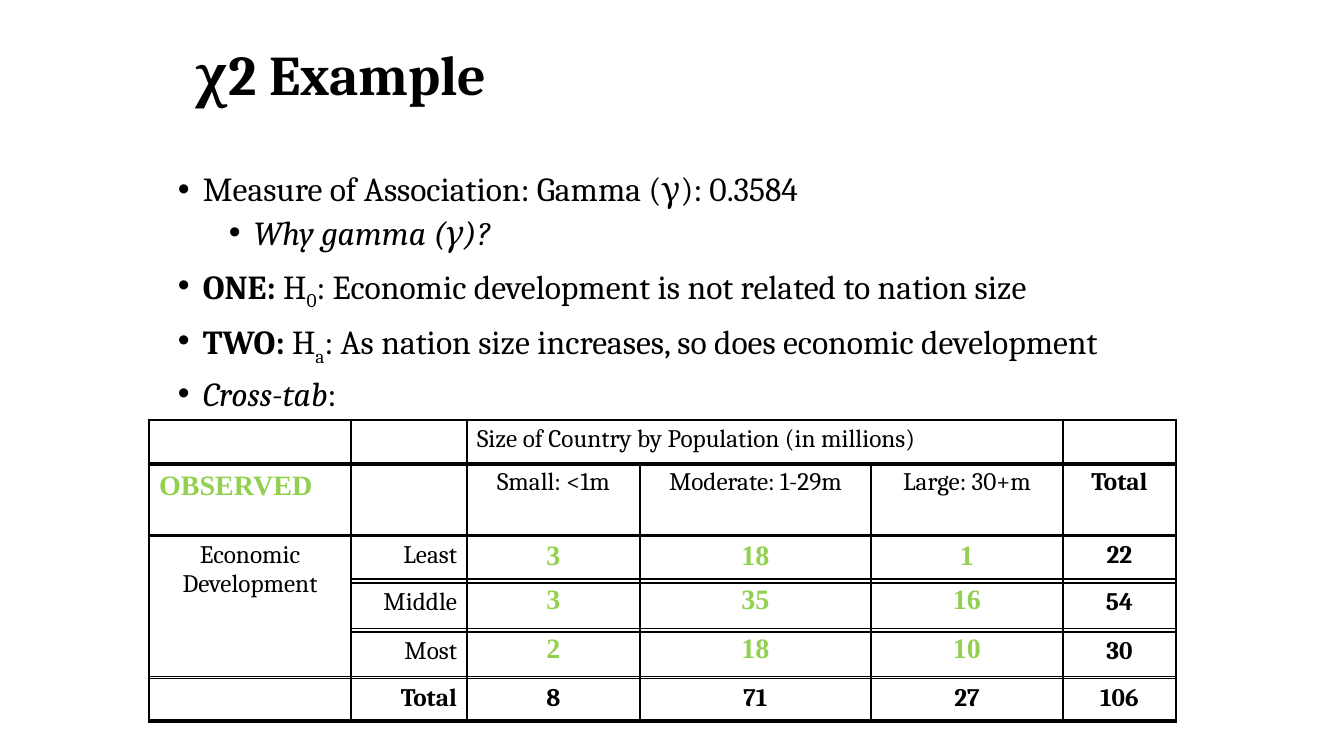
"""Build the chi-square example slide with its two overlaid cross-tab grids."""
import lxml.etree
import pptx
import pptx.dml.color
import pptx.enum.text
import pptx.oxml.ns
import pptx.util

BLACK = pptx.dml.color.RGBColor(0x00, 0x00, 0x00)
GREEN = pptx.dml.color.RGBColor(0x92, 0xD0, 0x50)
ALIGN = pptx.enum.text.PP_ALIGN
ANCHOR = pptx.enum.text.MSO_ANCHOR

TITLE = "χ2 Example"
BULLETS = [
    (0, [("Measure of Association: Gamma (γ): 0.3584", {})]),
    (1, [("Why gamma (γ)?", {"italic": True})]),
    (0, [("ONE: ", {"bold": True}), ("H", {}), ("0", {"subscript": True}),
         (": Economic development is not related to nation size", {})]),
    (0, [("TWO: ", {"bold": True}), ("H", {}), ("a", {"subscript": True}),
         (": As nation size increases, so does economic development", {})]),
    (0, [("Cross-tab", {"italic": True}), (":", {})]),
]
LABELS = [
    ["", "", "Size of Country by Population (in millions)", "", "", ""],
    ["", "", "Small: <1m", "Moderate: 1-29m", "Large: 30+m", "Total"],
    ["Economic Development", "Least", "", "", "", "22"],
    ["", "Middle", "", "", "", "54"],
    ["", "Most", "", "", "", "30"],
    ["", "Total", "8", "71", "27", "106"],
]
OBSERVED = [
    ["OBSERVED", "", "", "", "", ""],
    ["", "", "3", "18", "1", ""],
    ["", "", "3", "35", "16", ""],
    ["", "", "2", "18", "10", ""],
    ["", "", "", "", "", ""],
]
COLUMN_WIDTHS = [202, 116, 173, 231, 192, 113]
LABEL_HEIGHTS = [43, 73, 47, 49, 47, 41]
OBSERVED_HEIGHTS = [70, 44, 50, 48, 45]
LABEL_MERGES = [((0, 2), (0, 4)), ((2, 0), (4, 0))]
OBSERVED_MERGES = [((1, 0), (3, 0))]
TABLE_LEFT, LABEL_TOP, OBSERVED_TOP = 149, 420, 465
INNER_LINE, OUTER_LINE = 1, 2.25


def px(length):
    return pptx.util.Emu(round(length * 914400 / 100.8))


def add_text(para, text, size=24, font="Cambria", color=BLACK, bold=False,
             italic=False, subscript=False):
    span = para.add_run()
    span.text = text
    span.font.size = pptx.util.Pt(size)
    span.font.name = font
    span.font.color.rgb = color
    span.font.bold = bold
    span.font.italic = italic
    if subscript:
        span.font._element.set("baseline", "-25000")


def add_box(page, left, top, width, height, anchor):
    box = page.shapes.add_textbox(px(left), px(top), px(width), px(height))
    box.text_frame.word_wrap = True
    box.text_frame.vertical_anchor = anchor
    return box.text_frame


def add_bullet(para, level):
    para.level = level
    para.line_spacing = 0.9
    para.space_before = pptx.util.Pt(5 if level else 10)
    properties = para._p.get_or_add_pPr()
    properties.set("marL", str(px(25 + 51 * level)))
    properties.set("indent", str(px(-25)))
    tag = pptx.oxml.ns.qn
    lxml.etree.SubElement(properties, tag("a:buFont")).set("typeface", "Arial")
    lxml.etree.SubElement(properties, tag("a:buChar")).set("char", "•")


def add_border(cell, side, width):
    tag = pptx.oxml.ns.qn
    line = lxml.etree.SubElement(cell._tc.get_or_add_tcPr(), tag(f"a:ln{side}"))
    line.set("w", str(pptx.util.Pt(width)))
    fill = lxml.etree.SubElement(line, tag("a:solidFill"))
    lxml.etree.SubElement(fill, tag("a:srgbClr")).set("val", str(BLACK))


def add_grid(page, top, heights, rows, merges, outer, style):
    frame = page.shapes.add_table(
        len(rows), len(COLUMN_WIDTHS), px(TABLE_LEFT), px(top),
        px(sum(COLUMN_WIDTHS)), px(sum(heights)))
    grid = frame.table
    grid.first_row = grid.horz_banding = False
    for column, width in zip(grid.columns, COLUMN_WIDTHS):
        column.width = px(width)
    for row, height in zip(grid.rows, heights):
        row.height = px(height)
    for start, end in merges:
        grid.cell(*start).merge(grid.cell(*end))
    last_row, last_column = len(rows) - 1, len(COLUMN_WIDTHS) - 1
    for r, texts in enumerate(rows):
        for c, text in enumerate(texts):
            cell = grid.cell(r, c)
            edges = {"L": c == 0, "R": c == last_column,
                     "T": r == 0 and "T" in outer, "B": r == last_row}
            for side, is_outer in edges.items():
                add_border(cell, side, OUTER_LINE if is_outer else INNER_LINE)
            cell.fill.background()
            if text:
                para = cell.text_frame.paragraphs[0]
                para.alignment, text_format = style(r, c)
                add_text(para, text, **text_format)


def label_style(row, column):
    if row == 0:
        alignment = ALIGN.LEFT
    else:
        alignment = ALIGN.RIGHT if column == 1 else ALIGN.CENTER
    bold = row == len(LABELS) - 1 or column == len(COLUMN_WIDTHS) - 1
    return alignment, {"size": 18, "bold": bold}


def observed_style(row, column):
    alignment = ALIGN.CENTER if row else ALIGN.LEFT
    return alignment, {"size": 20, "font": "Times New Roman",
                       "color": GREEN, "bold": True}


def main():
    deck = pptx.Presentation()
    deck.slide_width, deck.slide_height = px(1344), px(756)
    page = deck.slides.add_slide(deck.slide_layouts[6])

    title = add_box(page, 185, 17, 857, 121, ANCHOR.MIDDLE).paragraphs[0]
    title.line_spacing = 0.9
    add_text(title, TITLE, size=40, bold=True)

    body = add_box(page, 168, 168, 1008, 252, ANCHOR.TOP)
    for index, (level, spans) in enumerate(BULLETS):
        para = body.add_paragraph() if index else body.paragraphs[0]
        add_bullet(para, level)
        for text, text_format in spans:
            add_text(para, text, **text_format)

    add_grid(page, LABEL_TOP, LABEL_HEIGHTS, LABELS, LABEL_MERGES,
             "LRTB", label_style)
    add_grid(page, OBSERVED_TOP, OBSERVED_HEIGHTS, OBSERVED, OBSERVED_MERGES,
             "LRB", observed_style)
    deck.save("out.pptx")


if __name__ == "__main__":
    main()
